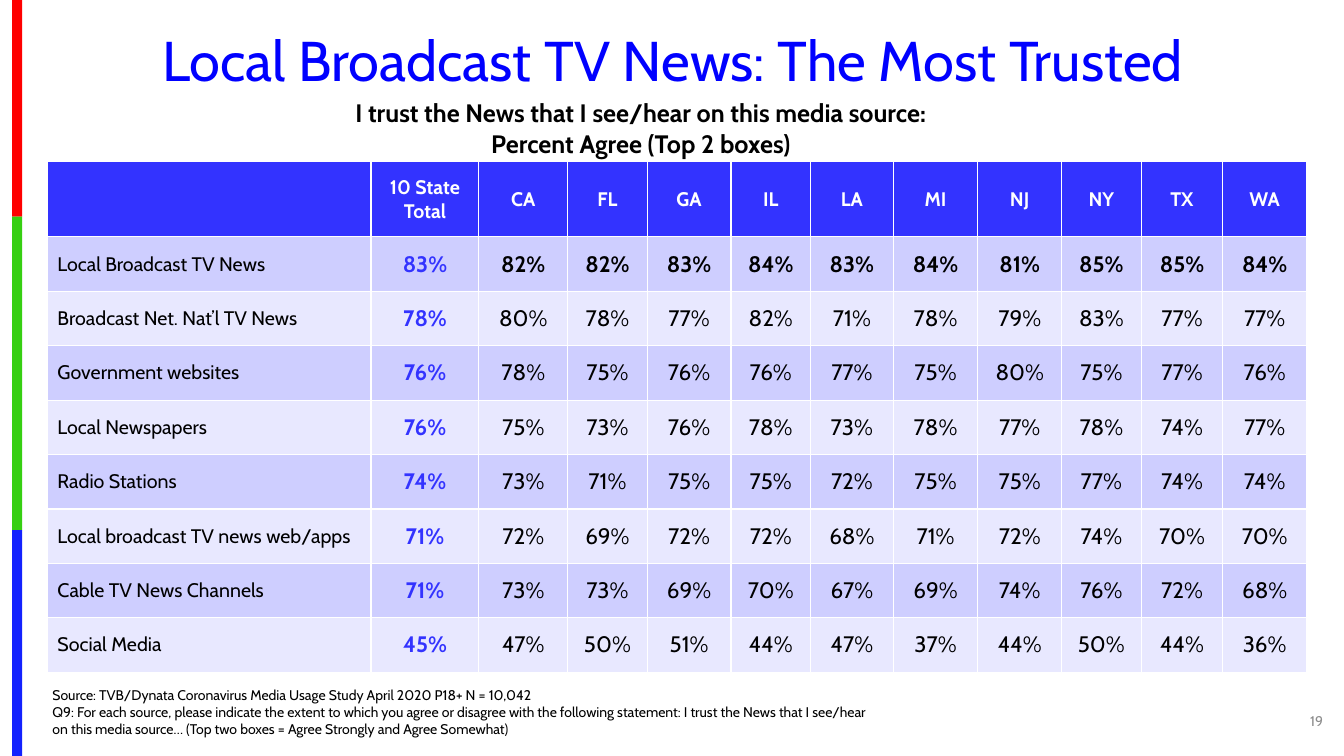
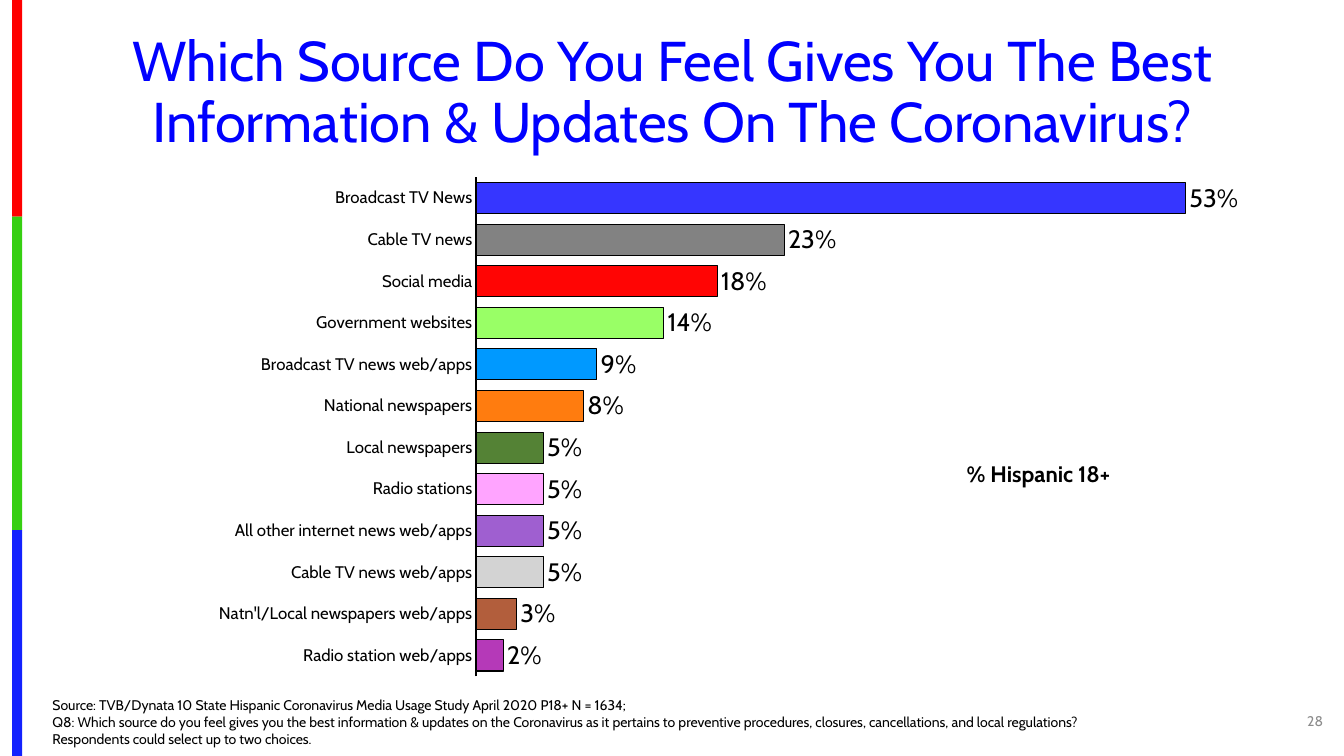
from dataclasses import dataclass

from lxml.etree import SubElement
from pptx import Presentation
from pptx.chart.data import CategoryChartData
from pptx.dml.color import RGBColor
from pptx.enum.chart import XL_CHART_TYPE, XL_LABEL_POSITION, XL_TICK_MARK
from pptx.enum.shapes import MSO_SHAPE
from pptx.enum.text import MSO_ANCHOR, MSO_AUTO_SIZE, PP_ALIGN
from pptx.oxml import parse_xml
from pptx.oxml.ns import nsdecls, qn
from pptx.util import Inches, Pt


@dataclass(frozen=True)
class Theme:
    font: str = "Cabin"
    black: str = "000000"
    white: str = "FFFFFF"
    gray: str = "8C8C8C"
    title: str = "0000FF"
    head: str = "3333FF"
    rows: tuple = ("CECEFF", "E8E8FF")
    bands: tuple = (("FE0000", 2.15), ("36CF12", 3.11), ("1322FE", 2.24))
    series: str = "CCCCCC"
    bars: tuple = ("3636FF", "828282", "FF0504", "99FF66", "0099FF", "FF7C0F",
                   "548235", "FFA4FF", "9F5FD0", "D3D3D3", "B25E3C", "B539B8")
    big: int = 40
    sub: int = 18
    value: int = 16
    label: int = 14
    axis: int = 12
    small: int = 10


def color(code):
    return RGBColor.from_string(code)


def fill(part, code):
    part.fill.solid()
    part.fill.fore_color.rgb = color(code)


def place(shape, left, top, width, height):
    shape.left, shape.top = Inches(left), Inches(top)
    shape.width, shape.height = Inches(width), Inches(height)


class Deck:
    def __init__(self, theme):
        self.theme = theme
        self.deck = Presentation()
        self.deck.slide_width = Inches(13.33)
        self.deck.slide_height = Inches(7.5)
        self.layout = self.deck.slide_layouts[1]
        self.slide = None

    def style(self, font, size, code, bold=False):
        font.name, font.size, font.bold = self.theme.font, Pt(size), bold
        font.color.rgb = color(code)

    def put(self, frame, text, size, code, bold=False, align=PP_ALIGN.LEFT):
        """Set the text of a frame and format its runs."""
        frame.text = text
        for para in frame.paragraphs:
            para.alignment = align
            for run in para.runs:
                self.style(run.font, size, code, bold)

    def bands(self):
        """Draw the side bands once, on the layout."""
        top = 0
        for code, height in self.theme.bands:
            band = self.slide.shapes.add_shape(
                MSO_SHAPE.RECTANGLE, Inches(0.12), Inches(top),
                Inches(0.1), Inches(height))
            fill(band, code)
            band.line.fill.background()
            band.shadow.inherit = False
            self.layout.shapes.element.append(band.element)
            top += height

    def page(self, title, height, number):
        first = self.slide is None
        self.slide = self.deck.slides.add_slide(self.layout)
        if first:
            self.bands()
        shape = self.slide.shapes.title
        place(shape, 0.42, 0.28, 12.5, height)
        frame = shape.text_frame
        frame.auto_size = MSO_AUTO_SIZE.NONE
        frame.vertical_anchor = MSO_ANCHOR.TOP
        self.put(frame, title, self.theme.big, self.theme.title,
                 align=PP_ALIGN.CENTER)
        frame.paragraphs[0].line_spacing = 0.9
        self.text((12.62, 6.95, 0.6, 0.4), number, self.theme.small,
                  self.theme.gray, align=PP_ALIGN.RIGHT,
                  anchor=MSO_ANCHOR.MIDDLE)

    def text(self, box, text, size, code, bold=False,
             align=PP_ALIGN.CENTER, anchor=MSO_ANCHOR.TOP):
        frame = self.slide.shapes.add_textbox(*map(Inches, box)).text_frame
        frame.word_wrap = True
        frame.vertical_anchor = anchor
        self.put(frame, text, size, code, bold, align)

    def source(self, box, text):
        shape = self.slide.placeholders[1]
        place(shape, *box)
        frame = shape.text_frame
        frame.auto_size = MSO_AUTO_SIZE.NONE
        frame.vertical_anchor = MSO_ANCHOR.BOTTOM
        frame.text = text
        for para in frame.paragraphs:
            props = para._p.get_or_add_pPr()
            props.set("marL", "0")
            props.set("indent", "0")
            SubElement(props, qn("a:buNone"))
            para.space_before = Pt(0)
            for run in para.runs:
                self.style(run.font, self.theme.small, self.theme.black)

    def cell(self, cell, text, row, col):
        theme = self.theme
        size, code, bold = theme.value, theme.black, row == 1
        if row == 0:
            size, code, bold = theme.label, theme.white, True
        elif col == 0:
            size, bold = theme.label, False
        elif col == 1:
            code, bold = theme.head, True
        fill(cell, theme.rows[(row - 1) % 2] if row else theme.head)
        cell.vertical_anchor = MSO_ANCHOR.MIDDLE
        align = PP_ALIGN.CENTER if col else PP_ALIGN.LEFT
        self.put(cell.text_frame, text, size, code, bold, align)

    def table(self, box, widths, heights, rows):
        table = self.slide.shapes.add_table(
            len(rows), len(widths), *map(Inches, box)).table
        for col, width in zip(table.columns, widths):
            col.width = Inches(width)
        for line, height in zip(table.rows, heights):
            line.height = Inches(height)
        for row, texts in enumerate(rows):
            for col, text in enumerate(texts):
                self.cell(table.cell(row, col), text, row, col)

    def chart(self, box, plot, items):
        theme = self.theme
        data = CategoryChartData(number_format="0%")
        data.categories = [name for name, _ in items]
        data.add_series("Series 1", [value for _, value in items])
        chart = self.slide.shapes.add_chart(
            XL_CHART_TYPE.BAR_CLUSTERED, *map(Inches, box), data).chart
        self.style(chart.font, theme.small, theme.black)
        chart.has_legend = chart.has_title = False
        self.axes(chart)
        bars = chart.plots[0]
        bars.gap_width = 34
        bars.vary_by_categories = False
        self.labels(bars)
        series = bars.series[0]
        series.invert_if_negative = False
        parts = [series] + [series.points[i] for i in range(len(items))]
        for part, code in zip(parts, (theme.series, *theme.bars)):
            fill(part.format, code)
            part.format.line.color.rgb = color(theme.black)
            part.format.line.width = Pt(0.75)
        self.area(chart, plot)

    def axes(self, chart):
        names, values = chart.category_axis, chart.value_axis
        names.reverse_order = True
        names.major_tick_mark = names.minor_tick_mark = XL_TICK_MARK.NONE
        names.has_major_gridlines = values.has_major_gridlines = False
        names.format.line.color.rgb = color(self.theme.black)
        names.format.line.width = Pt(1.5)
        self.style(names.tick_labels.font, self.theme.axis, self.theme.black)
        values.minimum_scale, values.maximum_scale = 0, 0.6
        values.visible = False

    def labels(self, bars):
        bars.has_data_labels = True
        labels = bars.data_labels
        labels.show_value = True
        labels.number_format = "0%"
        labels.number_format_is_linked = False
        labels.position = XL_LABEL_POSITION.OUTSIDE_END
        self.style(labels.font, self.theme.sub, self.theme.black)

    def area(self, chart, plot):
        """Fix the inner plot area, in shares of the chart's size."""
        area = chart.element.xpath("c:chart/c:plotArea")[0]
        for old in area.findall(qn("c:layout")):
            area.remove(old)
        sizes = "".join(f'<c:{key} val="{val}"/>'
                        for key, val in zip("xywh", plot))
        area.insert(0, parse_xml(
            f'<c:layout {nsdecls("c")}><c:manualLayout>'
            '<c:layoutTarget val="inner"/><c:xMode val="edge"/>'
            f'<c:yMode val="edge"/>{sizes}</c:manualLayout></c:layout>'))


STATES = "CA FL GA IL LA MI NJ NY TX WA".split()
TRUST = (
    ("Local Broadcast TV News", "83 82 82 83 84 83 84 81 85 85 84"),
    ("Broadcast Net. Nat’l TV News", "78 80 78 77 82 71 78 79 83 77 77"),
    ("Government websites", "76 78 75 76 76 77 75 80 75 77 76"),
    ("Local Newspapers", "76 75 73 76 78 73 78 77 78 74 77"),
    ("Radio Stations", "74 73 71 75 75 72 75 75 77 74 74"),
    ("Local broadcast TV news web/apps", "71 72 69 72 72 68 71 72 74 70 70"),
    ("Cable TV News Channels", "71 73 73 69 70 67 69 74 76 72 68"),
    ("Social Media", "45 47 50 51 44 47 37 44 50 44 36"),
)
BEST = (
    ("Broadcast TV News", 0.53),
    ("Cable TV news", 0.23),
    ("Social media", 0.18),
    ("Government websites", 0.14),
    ("Broadcast TV news web/apps", 0.09),
    ("National newspapers", 0.08),
    ("Local newspapers", 0.05),
    ("Radio stations", 0.05),
    ("All other internet news web/apps", 0.05),
    ("Cable TV news web/apps", 0.05),
    ("Natn'l/Local newspapers web/apps", 0.03),
    ("Radio station web/apps", 0.02),
)


def trust(deck):
    theme = deck.theme
    deck.page("Local Broadcast TV News: The Most Trusted", 0.71, "19")
    deck.source(
        (0.42, 7.09, 9.45, 0.27),
        "Source: TVB/Dynata Coronavirus Media Usage Study April 2020 P18+ "
        "N = 10,042\n"
        "Q9: For each source, please indicate the extent to which you agree "
        "or disagree with the following statement: I trust the News that I "
        "see/hear\n"
        "on this media source… (Top two boxes = Agree Strongly and Agree "
        "Somewhat)")
    rows = [["", "10 State Total", *STATES]]
    rows += [[name, *(f"{share}%" for share in shares.split())]
             for name, shares in TRUST]
    widths = (3.21, 1.07, 0.88, 0.79, 0.83, 0.79, 0.82, 0.84, 0.83, 0.79,
              0.81, 0.83)
    heights = [0.75] + [0.54] * len(TRUST)
    deck.table((0.47, 1.6, 12.5, 5.08), widths, heights, rows)
    deck.text((1.09, 0.92, 10.53, 0.71),
              "I trust the News that I see/hear on this media source:\n"
              "Percent Agree (Top 2 boxes)", theme.sub, theme.black, True)


def best(deck):
    theme = deck.theme
    deck.page("Which Source Do You Feel Gives You The Best Information & "
              "Updates On The Coronavirus?", 1.31, "28")
    deck.chart((0.56, 1.5, 12.25, 5.22), (0.34, 0.05, 0.65, 0.95), BEST)
    deck.source(
        (0.42, 6.95, 10.73, 0.51),
        "Source: TVB/Dynata 10 State Hispanic Coronavirus Media Usage Study "
        "April 2020 P18+ N = 1634;\n"
        "Q8: Which source do you feel gives you the best information & "
        "updates on the Coronavirus as it pertains to preventive procedures, "
        "closures, cancellations, and local regulations? Respondents could "
        "select up to two choices.")
    deck.text((9.15, 4.52, 2.3, 0.37), "% Hispanic 18+", theme.value,
              theme.black, True)


def main():
    deck = Deck(Theme())
    trust(deck)
    best(deck)
    deck.deck.save("out.pptx")


if __name__ == "__main__":
    main()
